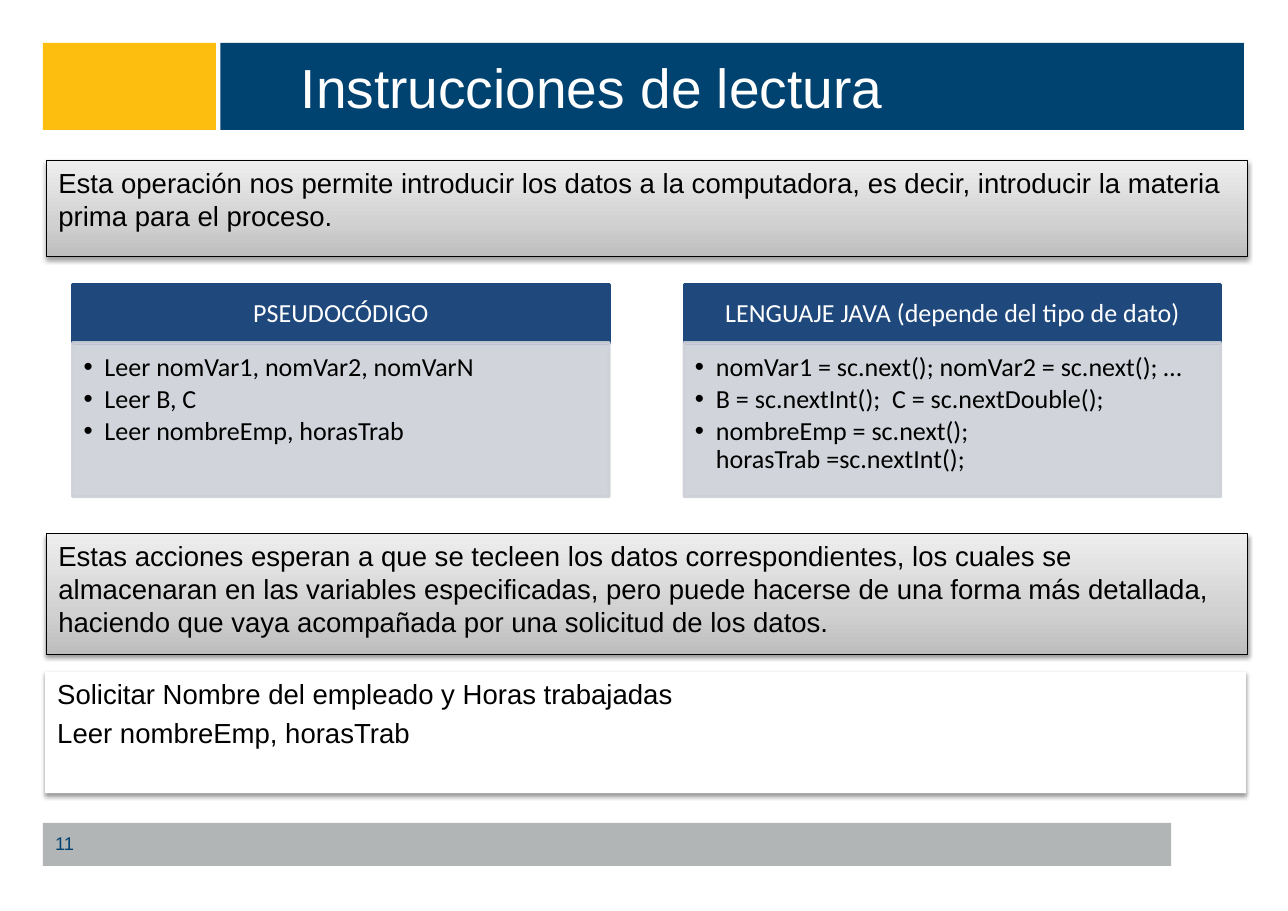
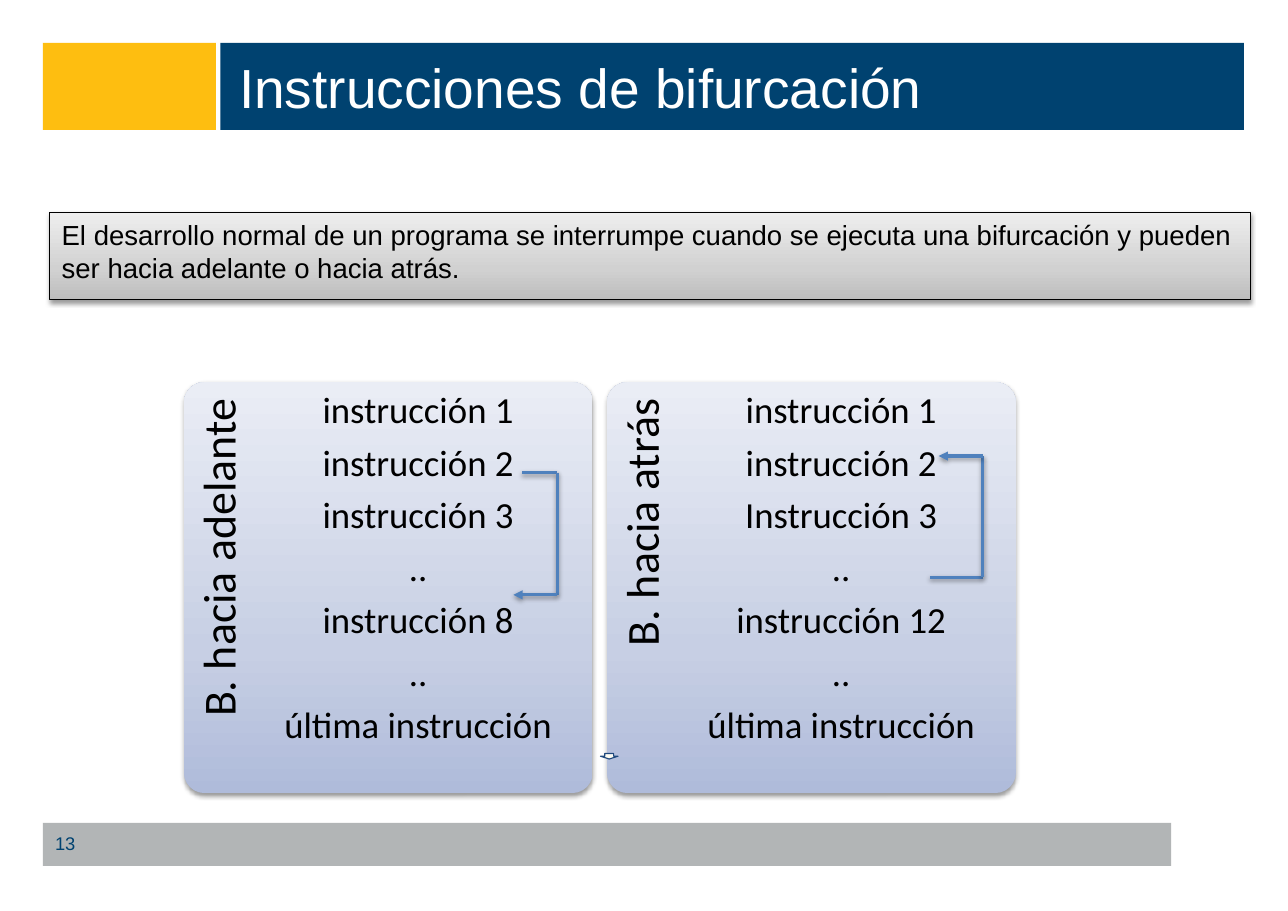
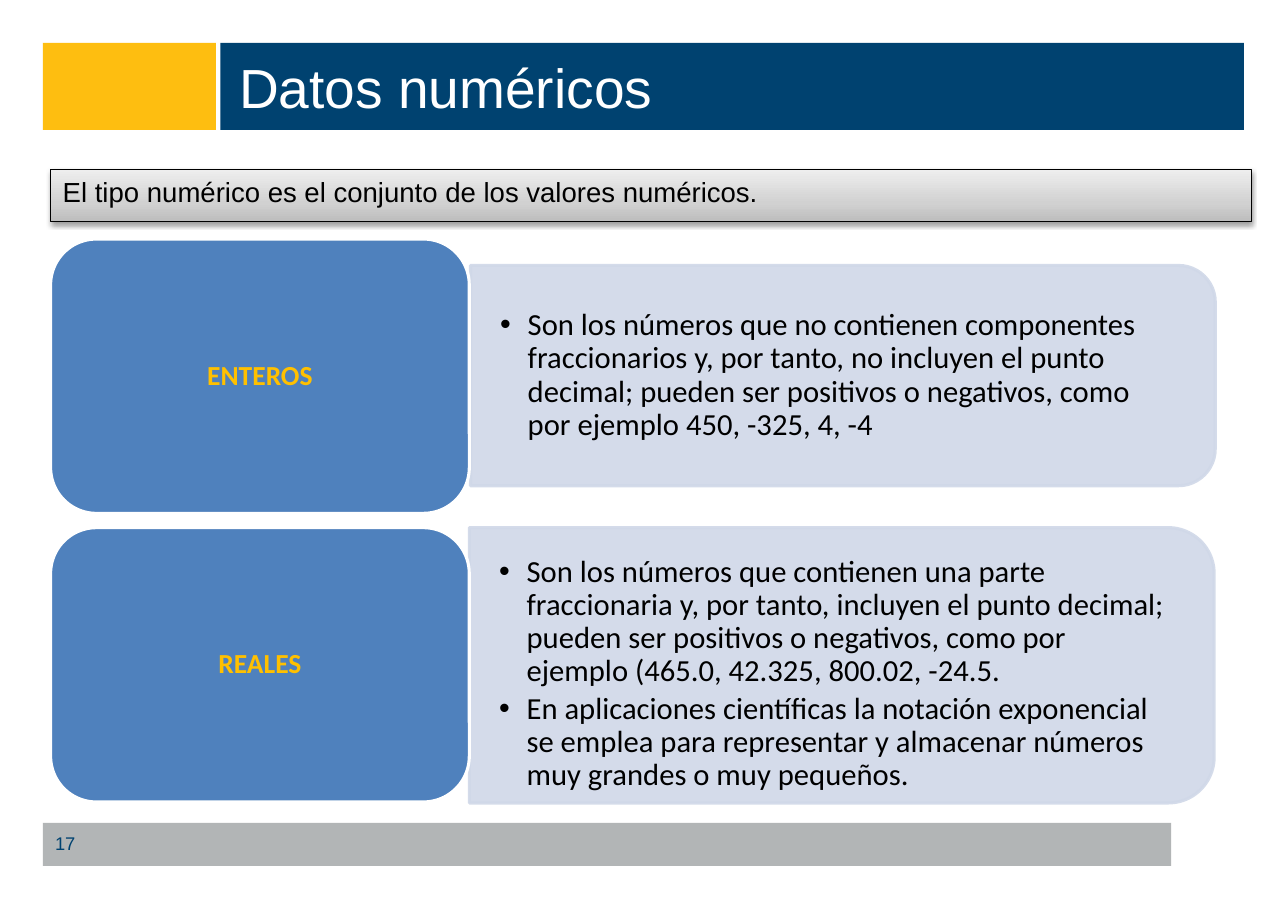
from dataclasses import dataclass
from itertools import pairwise

from lxml.etree import SubElement
from pptx import Presentation
from pptx.dml.color import RGBColor
from pptx.enum.shapes import MSO_CONNECTOR, MSO_SHAPE
from pptx.enum.text import MSO_ANCHOR, PP_ALIGN
from pptx.oxml.ns import qn
from pptx.util import Emu, Pt

PX = 9144


@dataclass(frozen=True)
class Theme:
    sans: str = "Arial"
    diagram: str = "Calibri"
    title_size: int = 36
    body_size: int = 18
    number_size: int = 12
    column_size: int = 17
    label_size: int = 30
    step_size: int = 24
    panel_size: int = 20
    white: str = "FFFFFF"
    black: str = "000000"
    gold: str = "FEBE10"
    navy: str = "004270"
    footer: str = "B2B5B6"
    header: str = "1F497D"
    column: str = "CDD0D7"
    blue: str = "4F81BD"
    panel: str = "D0D8E8"
    amber: str = "FFC000"
    gray_fade: tuple = ((0, "BDBDBD"), (35, "D1D1D1"), (100, "EEEEEE"))
    blue_fade: tuple = ((0, "AFBBDA"), (35, "C7CFE4"), (100, "EAEDF5"))
    cream_fade: tuple = ((0, "FDFAEB"), (35, "FDFBF0"), (100, "FFFEF9"))


T = Theme()
MARGINS = (11, 5, 11, 5)
TITLE_RIGHT = 1129

BANDS = [
    ((39, 39, 157, 79), T.gold),
    ((200, 39, 929, 79), T.navy),
    ((39, 747, 1024, 39), T.footer),
]

READING = {
    "title": "Instrucciones de lectura",
    "title_left": 262,
    "number": "11",
    "intro_box": (42, 146, 1090, 87),
    "intro": "Esta operación nos permite introducir los datos a la computadora, es decir, "
             "introducir la materia prima para el proceso.",
}
COLUMNS = [
    ("PSEUDOCÓDIGO",
     ["Leer nomVar1, nomVar2, nomVarN", "Leer B, C", "Leer nombreEmp, horasTrab"]),
    ("LENGUAJE JAVA (depende del tipo de dato)",
     ["nomVar1 = sc.next(); nomVar2 = sc.next(); …",
      "B = sc.nextInt();  C = sc.nextDouble();",
      "nombreEmp = sc.next();\nhorasTrab =sc.nextInt();"]),
]
WAITING = ("Estas acciones esperan a que se tecleen los datos correspondientes, los cuales se "
           "almacenaran en las variables especificadas, pero puede hacerse de una forma más "
           "detallada, haciendo que vaya acompañada por una solicitud de los datos.")
REQUEST = ["Solicitar Nombre del empleado y Horas trabajadas", "Leer nombreEmp, horasTrab"]

BRANCHING = {
    "title": "Instrucciones de bifurcación",
    "title_left": 206,
    "number": "13",
    "intro_box": (45, 193, 1090, 79),
    "intro": "El desarrollo normal de un programa se interrumpe cuando se ejecuta una "
             "bifurcación y pueden ser hacia adelante o hacia atrás.",
}
BRANCHES = [
    ("B. hacia adelante",
     ["instrucción 1", "instrucción 2", "instrucción 3", "..", "instrucción 8", "..",
      "última instrucción"],
     [(474, 429), (506, 429), (506, 540), (466, 540)]),
    ("B. hacia atrás",
     ["instrucción 1", "instrucción 2", "Instrucción 3", "..", "instrucción 12", "..",
      "última instrucción"],
     [(844, 524), (892, 524), (892, 414), (852, 414)]),
]

NUMBERS = {
    "title": "Datos numéricos",
    "title_left": 206,
    "number": "17",
    "intro_box": (46, 154, 1090, 47),
    "intro": "El tipo numérico es el conjunto de los valores numéricos.",
}
KINDS = [
    ("ENTEROS", (427, 241, 676, 200), 10, MSO_ANCHOR.MIDDLE,
     ["Son los números que no contienen componentes fraccionarios y, por tanto, no incluyen "
      "el punto decimal; pueden ser positivos o negativos, como por ejemplo 450, -325, 4, -4"]),
    ("REALES", (426, 479, 676, 250), 12, MSO_ANCHOR.TOP,
     ["Son los números que contienen una parte fraccionaria y, por tanto, incluyen el punto "
      "decimal; pueden ser positivos o negativos, como por ejemplo "
      "(465.0, 42.325, 800.02, -24.5.",
      "En aplicaciones científicas la notación exponencial se emplea para representar y "
      "almacenar números muy grandes o muy pequeños."]),
]


def px(*values):
    return [Emu(round(v * PX)) for v in values]


def rgb(color):
    return RGBColor.from_string(color)


def child(parent, tag, **attrs):
    return SubElement(parent, qn(tag), {k: str(v) for k, v in attrs.items()})


def turned(x, y, w, h):
    return x + (w - h) / 2, y + (h - w) / 2, h, w


def set_effects(spPr, shadow):
    effects = child(spPr, "a:effectLst")
    if shadow:
        outer = child(effects, "a:outerShdw", blurRad=Pt(3.1), dist=Pt(1.6),
                      dir=5400000, rotWithShape=0)
        child(child(outer, "a:srgbClr", val=T.black), "a:alpha", val=38000)


def set_fill(sp, fill):
    if isinstance(fill, str):
        sp.fill.solid()
        sp.fill.fore_color.rgb = rgb(fill)
        return
    sp.fill.gradient()
    sp.fill.gradient_angle = 90
    stops = sp.element.spPr.find(".//" + qn("a:gsLst"))
    stops.clear()
    for pos, color in fill:
        child(child(stops, "a:gs", pos=pos * 1000), "a:srgbClr", val=color)


def add_box(s, box, fill, kind=MSO_SHAPE.RECTANGLE, line=None, width=2,
            alpha=None, shadow=False, rotation=0):
    sp = s.shapes.add_shape(kind, *px(*box))
    sp.rotation = rotation
    set_fill(sp, fill)
    if line:
        sp.line.color.rgb = rgb(line)
        sp.line.width = Pt(width)
    else:
        sp.line.fill.background()
    if alpha:
        for color in sp.element.spPr.iter(qn("a:srgbClr")):
            child(color, "a:alpha", val=alpha * 1000)
    set_effects(sp.element.spPr, shadow)
    return sp


def write(sp, lines, size, font=T.sans, color=T.black, align=PP_ALIGN.LEFT,
          anchor=MSO_ANCHOR.TOP, margins=MARGINS, bold=False, spacing=None,
          before=0, after=0, indent=0):
    tf = sp.text_frame
    tf.word_wrap = True
    tf.vertical_anchor = anchor
    tf.margin_left, tf.margin_top, tf.margin_right, tf.margin_bottom = px(*margins)
    for i, line in enumerate(lines):
        p = tf.add_paragraph() if i else tf.paragraphs[0]
        p.alignment = align
        p.line_spacing = spacing
        p.space_before = Pt(before * size if i else 0)
        p.space_after = Pt(after * size)
        if indent:
            pPr = p._p.get_or_add_pPr()
            pPr.set("marL", str(indent * PX))
            pPr.set("indent", str(-indent * PX))
            child(pPr, "a:buFont", typeface=T.sans)
            child(pPr, "a:buChar", char="•")
        for j, part in enumerate(line.split("\n")):
            if j:
                p.add_line_break()
            r = p.add_run()
            r.text = part
            r.font.name, r.font.size, r.font.bold = font, Pt(size), bold
            r.font.color.rgb = rgb(color)


def write_diagram(sp, lines, size, after=0.35, **style):
    write(sp, lines, size, font=T.diagram, spacing=0.9, after=after, **style)


def add_text(s, box, rotation=0):
    sp = s.shapes.add_textbox(*px(*box))
    sp.rotation = rotation
    return sp


def add_note(s, box, lines, fill=T.gray_fade, line=T.black):
    sp = add_box(s, box, fill, line=line, width=0.75, shadow=True)
    write(sp, lines, T.body_size, before=0.2)


def add_route(s, points):
    segments = list(pairwise(points))
    for i, (start, end) in enumerate(segments):
        c = s.shapes.add_connector(MSO_CONNECTOR.STRAIGHT, *px(*start, *end))
        c.line.color.rgb = rgb(T.blue)
        c.line.width = Pt(2)
        if i == len(segments) - 1:
            child(c.line._get_or_add_ln(), "a:tailEnd", type="triangle")
        set_effects(c.element.spPr, True)


def add_bands(s):
    tree = s.slide_layout.shapes.element
    for i, (box, color) in enumerate(BANDS):
        el = add_box(s, box, color).element
        el.nvSpPr.cNvPr.set("id", str(20 + i))
        tree.insert(2 + i, el)


def add_slide(prs, data):
    s = prs.slides.add_slide(prs.slide_layouts[5])
    title, left = s.shapes.title, data["title_left"]
    title.left, title.top, title.width, title.height = px(left, 39, TITLE_RIGHT - left, 79)
    write(title, [data["title"]], T.title_size, color=T.white, anchor=MSO_ANCHOR.MIDDLE)
    add_note(s, data["intro_box"], [data["intro"]])
    write(add_text(s, (39, 746, 273, 39)), [data["number"]], T.number_size,
          color=T.navy, anchor=MSO_ANCHOR.MIDDLE)
    return s


def build_reading(prs):
    s = add_slide(prs, READING)
    add_bands(s)
    for i, (heading, items) in enumerate(COLUMNS):
        x, w = 66 + 555 * i, 487
        head = add_box(s, (x, 258, w, 54), T.header, line=T.header)
        write_diagram(head, [heading], T.column_size, color=T.white, align=PP_ALIGN.CENTER,
                      anchor=MSO_ANCHOR.MIDDLE, margins=(13, 8, 13, 8))
        body = add_box(s, (x, 311, w, 140), T.column, line=T.column, alpha=90)
        write_diagram(body, items, T.column_size, after=0.15, indent=19,
                      margins=(10, 10, 13, 15))
    add_note(s, (42, 484, 1090, 110), [WAITING])
    add_note(s, (41, 610, 1090, 110), REQUEST, fill=T.white, line=None)


def build_branching(prs):
    s = add_slide(prs, BRANCHING)
    y, w, h, label_w = 347, 371, 373, 74
    for i, (label, steps, route) in enumerate(BRANCHES):
        x = 167 + 384 * i
        card = add_box(s, (x, y, w, h), T.blue_fade, MSO_SHAPE.ROUNDED_RECTANGLE, shadow=True)
        card.adjustments[0] = 0.05
        write_diagram(add_text(s, turned(x, y, label_w, h), 270), [label], T.label_size,
                      align=PP_ALIGN.RIGHT, margins=(0, 11, 15, 0))
        write_diagram(add_text(s, (x + label_w, y, 277, h)), steps, T.step_size,
                      align=PP_ALIGN.CENTER, margins=(0, 9, 0, 0))
        add_route(s, route)
    add_box(s, (545, 684, 16, 5), T.cream_fade, MSO_SHAPE.DOWN_ARROW,
            line=T.header, width=0.75)


def build_numbers(prs):
    s = add_slide(prs, NUMBERS)
    for i, (name, panel, pad, anchor, items) in enumerate(KINDS):
        x, y, w, h = panel
        add_box(s, turned(*panel), T.panel, MSO_SHAPE.ROUND_2_SAME_RECTANGLE,
                line=T.panel, alpha=90, rotation=90)
        write_diagram(add_text(s, (x, y + pad, w - 10, h - 2 * pad)), items, T.panel_size,
                      after=0.15, indent=25, anchor=anchor, margins=(27, 14, 27, 14))
        card = add_box(s, (46, 217 + 262 * i, 380, 249), T.blue,
                       MSO_SHAPE.ROUNDED_RECTANGLE, line=T.white)
        write_diagram(card, [name], T.body_size, color=T.amber, bold=True,
                      align=PP_ALIGN.CENTER, anchor=MSO_ANCHOR.MIDDLE, margins=(7, 4, 7, 4))


def main():
    prs = Presentation()
    prs.slide_width, prs.slide_height = px(1169, 827)
    build_reading(prs)
    build_branching(prs)
    build_numbers(prs)
    prs.save("out.pptx")


if __name__ == "__main__":
    main()
